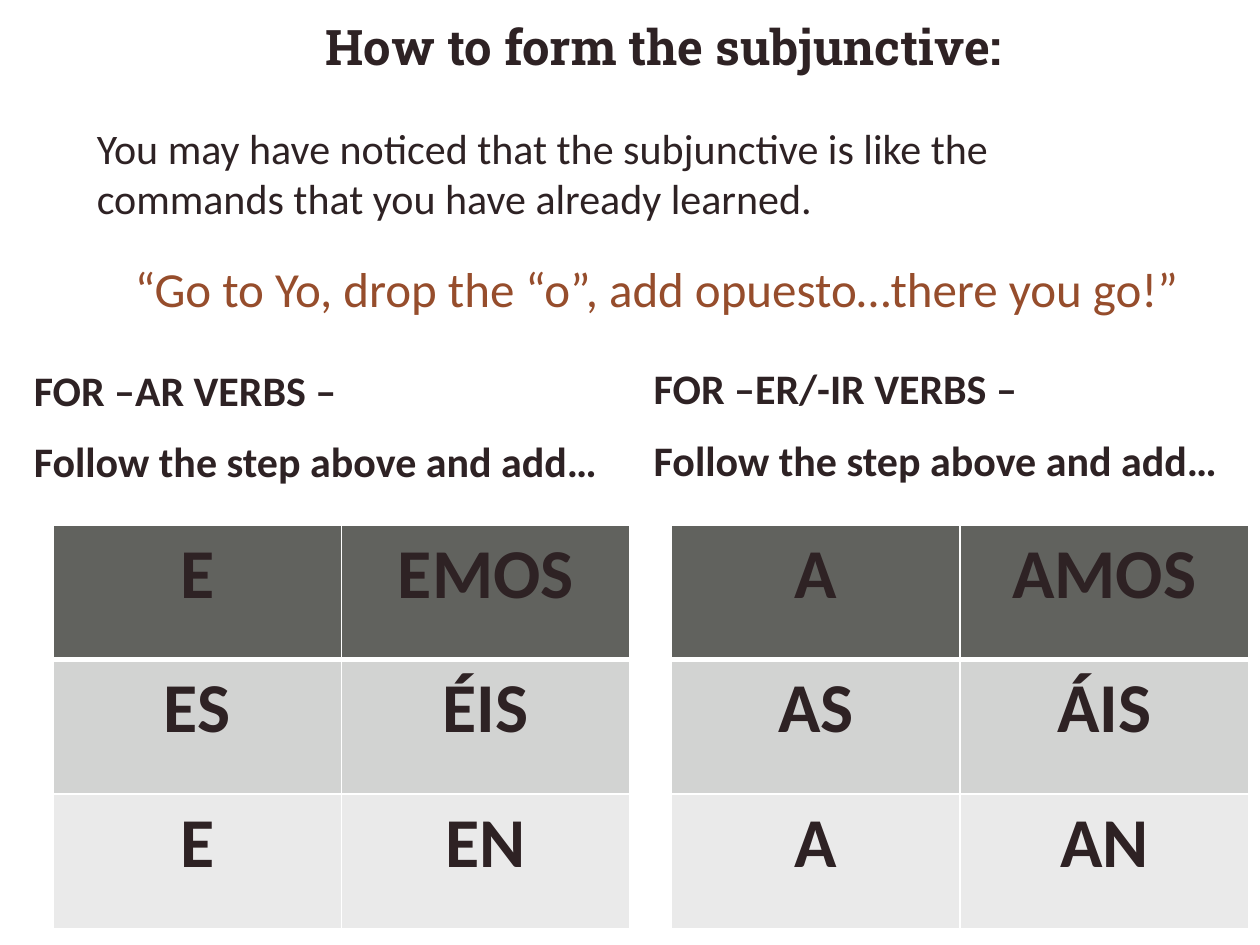
"""Build a slide on forming the Spanish subjunctive."""
from lxml.etree import SubElement
from pptx import Presentation
from pptx.dml.color import RGBColor
from pptx.enum.text import MSO_AUTO_SIZE as Auto, PP_ALIGN as Align
from pptx.oxml.ns import qn
from pptx.util import Inches, Pt

INK = "2E2224"
WHITE = "FFFFFF"


def style(para, size, bold=False, color=INK, face="Calibri", align=Align.LEFT):
    para.alignment = align
    font = para.font
    font.name, font.size, font.bold = face, Pt(size), bold
    font.color.rgb = RGBColor.from_string(color)


def edge(cell, side, width):
    line = SubElement(cell._tc.get_or_add_tcPr(), qn(f"a:ln{side}"), w=str(Pt(width)))
    fill = SubElement(line, qn("a:solidFill"))
    SubElement(fill, qn("a:srgbClr"), val=WHITE)


deck = Presentation()
deck.slide_width, deck.slide_height = Inches(10), Inches(7.5)
slide = deck.slides.add_slide(deck.slide_layouts[6])

title = dict(size=28, bold=True, face="Roboto Slab", align=Align.CENTER)
rhyme = dict(size=28, color="964D2C", align=Align.CENTER)
head = dict(size=24, bold=True)
step = "Follow the step above and add…"
texts = [
    ((2.4, 0.08, 5.73, 0.57), ["How to form the subjunctive:"], title, False),
    ((0.67, 0.92, 8.67, 0.91),
     ["You may have noticed that the subjunctive is like the commands "
      "that you have already learned."], dict(size=24), True),
    ((0, 2, 10.42, 0.57),
     ["“Go to Yo, drop the “o”, add opuesto…there you go!”"], rhyme, True),
    ((0.17, 2.84, 5.04, 1.11), ["FOR –AR VERBS –", step], head, True),
    ((5.09, 2.83, 5.04, 1.11), ["FOR –ER/-IR VERBS –", step], head, True),
]
for place, lines, look, wrap in texts:
    frame = slide.shapes.add_textbox(*map(Inches, place)).text_frame
    frame.word_wrap = wrap
    frame.auto_size = Auto.SHAPE_TO_FIT_TEXT
    frame.text = "\n".join(lines)
    for para in frame.paragraphs:
        style(para, **look)
    for para in frame.paragraphs[1:]:
        para.space_before = Pt(12)

fills = ["61625E", "D2D3D2", "EAEAEA"]
grids = [
    (0.42, [("E", "EMOS"), ("ES", "ÉIS"), ("E", "EN")]),
    (5.33, [("A", "AMOS"), ("AS", "ÁIS"), ("A", "AN")]),
]
for left, rows in grids:
    table = slide.shapes.add_table(
        3, 2, Inches(left), Inches(4.17), Inches(4.58), Inches(3.2)).table
    for r, row in enumerate(rows):
        for c, ending in enumerate(row):
            cell = table.cell(r, c)
            cell.text = ending
            style(cell.text_frame.paragraphs[0], 40, True, align=Align.CENTER)
            for side in "LRTB":
                thick = (r, side) in [(0, "B"), (1, "T")]
                edge(cell, side, 3 if thick else 1)
            cell.fill.solid()
            cell.fill.fore_color.rgb = RGBColor.from_string(fills[r])

deck.save("out.pptx")
